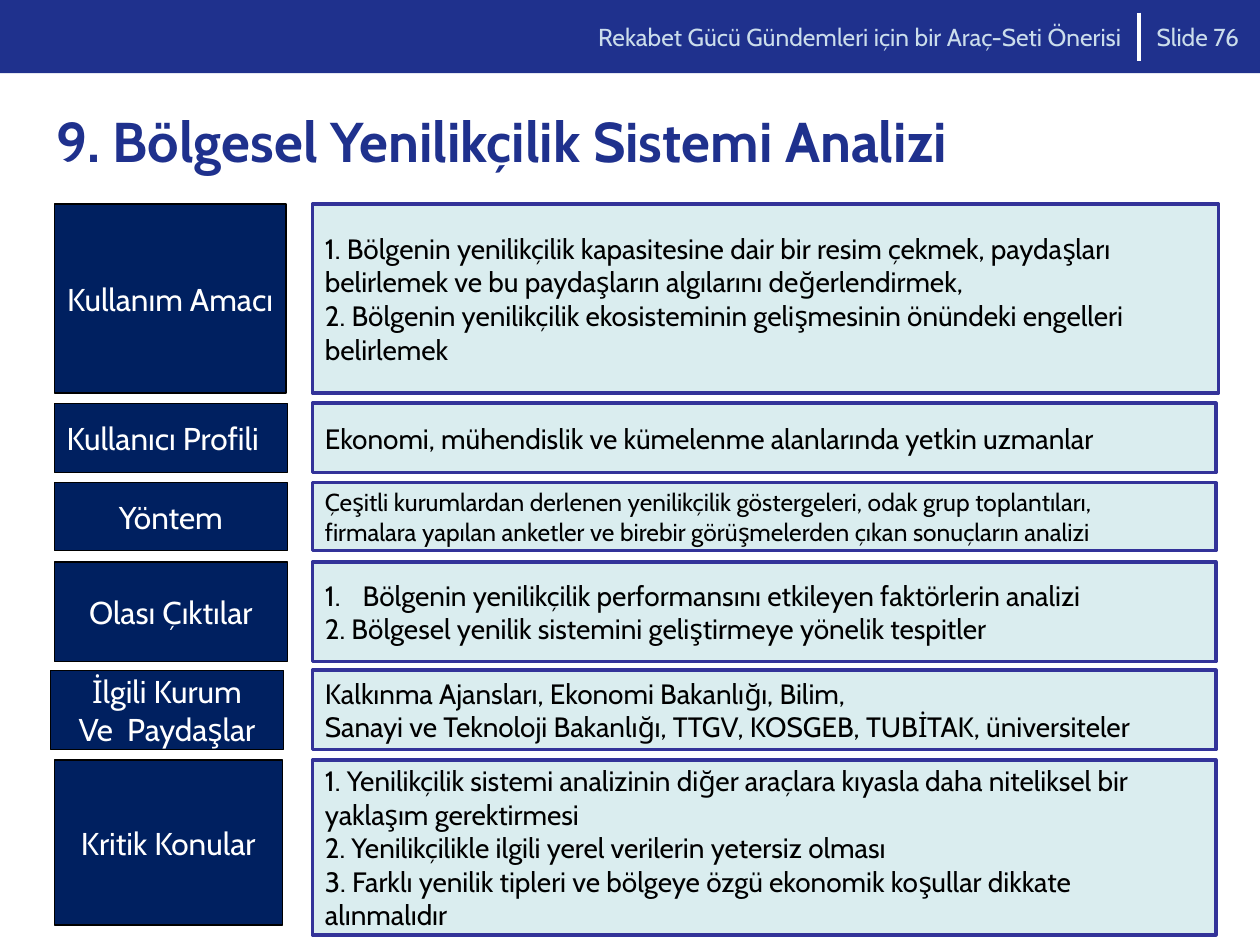
from lxml.etree import SubElement
from pptx import Presentation
from pptx.dml.color import RGBColor
from pptx.enum.shapes import MSO_CONNECTOR, MSO_SHAPE
from pptx.enum.text import MSO_ANCHOR, PP_ALIGN
from pptx.oxml.ns import qn
from pptx.util import Pt

BLUE = RGBColor(0x1F, 0x31, 0x8D)
NAVY = RGBColor(0x00, 0x20, 0x60)
INDIGO = RGBColor(0x33, 0x33, 0x99)
PALE_TEAL = RGBColor(0xDA, 0xED, 0xEF)
PALE_BLUE = RGBColor(0xCB, 0xDD, 0xEB)
WHITE = RGBColor(0xFF, 0xFF, 0xFF)
BLACK = RGBColor(0x00, 0x00, 0x00)
LEFT, CENTER, RIGHT = PP_ALIGN.LEFT, PP_ALIGN.CENTER, PP_ALIGN.RIGHT


def add_box(box, fill, line=None, line_width=0):
    """Add a flat rectangle; box is left, top, width, height in points."""
    shape = slide.shapes.add_shape(MSO_SHAPE.RECTANGLE, *map(Pt, box))
    shape.shadow.inherit = False
    shape.fill.solid()
    shape.fill.fore_color.rgb = fill
    if line is None:
        shape.line.fill.background()
    else:
        shape.line.color.rgb = line
        shape.line.width = Pt(line_width)
    return shape


def write(shape, lines, size, color, alignment=LEFT, bold=False, indent=0, numbered=()):
    """Fill a shape with one paragraph per line; numbered lists the auto-numbered lines."""
    frame = shape.text_frame
    frame.word_wrap = alignment != CENTER
    frame.vertical_anchor = MSO_ANCHOR.MIDDLE
    for index, line in enumerate(lines):
        paragraph = frame.paragraphs[0] if index == 0 else frame.add_paragraph()
        paragraph.alignment = alignment
        if indent:
            properties = paragraph._p.get_or_add_pPr()
            properties.set("marL", str(Pt(indent)))
            properties.set("indent", str(-Pt(indent)))
            if index in numbered:
                SubElement(properties, qn("a:buAutoNum"), type="arabicPeriod")
        run = paragraph.add_run()
        run.text = line
        for name, value in {"name": "Cabin", "size": Pt(size), "bold": bold}.items():
            setattr(run.font, name, value)
        run.font.color.rgb = color


presentation = Presentation()
presentation.slide_width, presentation.slide_height = Pt(720), Pt(540)
slide = presentation.slides.add_slide(presentation.slide_layouts[6])

# Header band
add_box((0, 0, 720, 41.8), BLUE)
divider = slide.shapes.add_connector(MSO_CONNECTOR.STRAIGHT, Pt(650.9), Pt(7.2), Pt(650.9), Pt(34.6))
divider.line.color.rgb = WHITE
divider.line.width = Pt(2.5)
SubElement(divider._element.spPr, qn("a:effectLst"))
for left, width, text, alignment in (
    (149.8, 498.2, "Rekabet Gücü Gündemleri için bir Araç-Seti Önerisi", RIGHT),
    (653.8, 66.2, "Slide 76", LEFT),
):
    header = slide.shapes.add_textbox(Pt(left), Pt(0), Pt(width), Pt(42))
    write(header, [text], 14, PALE_BLUE, alignment)

title = add_box((25.2, 60.5, 671.8, 39.6), WHITE)
write(title, ["9. Bölgesel Yenilikçilik Sistemi Analizi"], 32, BLUE, bold=True)

# Each row: top, label box (left, width, height), label lines and alignment,
# body box (width, height), body lines and their format
rows = (
    (116.6, (31, 132.5, 108), ["Kullanım Amacı"], CENTER, (517.7, 108), [
        "1. Bölgenin yenilikçilik kapasitesine dair bir resim çekmek, paydaşları",
        "belirlemek ve bu paydaşların algılarını değerlendirmek,",
        "2. Bölgenin yenilikçilik ekosisteminin gelişmesinin önündeki engelleri",
        "belirlemek",
    ], {"size": 16, "indent": 40}),
    (230.4, (31, 133.2, 39.6), ["Kullanıcı Profili"], LEFT, (516.2, 39.6), [
        "Ekonomi, mühendislik ve kümelenme alanlarında yetkin uzmanlar",
    ], {"size": 16}),
    (275.8, (31, 133.2, 38.9), ["Yöntem"], CENTER, (516.2, 38.9), [
        "Çeşitli kurumlardan derlenen yenilikçilik göstergeleri, odak grup toplantıları,",
        "firmalara yapılan anketler ve birebir görüşmelerden çıkan sonuçların analizi",
    ], {"size": 14}),
    (321.1, (31, 133.2, 56.9), ["Olası Çıktılar"], CENTER, (516.2, 56.9), [
        "Bölgenin yenilikçilik performansını etkileyen faktörlerin analizi",
        "2. Bölgesel yenilik sistemini geliştirmeye yönelik tespitler",
    ], {"size": 16, "indent": 21.6, "numbered": (0,)}),
    (383, (28.8, 133.2, 45.4), ["İlgili Kurum", "Ve  Paydaşlar"], CENTER, (516.2, 45.4), [
        "Kalkınma Ajansları, Ekonomi Bakanlığı, Bilim,",
        "Sanayi ve Teknoloji Bakanlığı, TTGV, KOSGEB, TUBİTAK, üniversiteler",
    ], {"size": 16}),
    (434.2, (31, 130.3, 94.3), ["Kritik Konular"], CENTER, (516.2, 100.1), [
        "1. Yenilikçilik sistemi analizinin diğer araçlara kıyasla daha niteliksel bir",
        "yaklaşım gerektirmesi",
        "2. Yenilikçilikle ilgili yerel verilerin yetersiz olması",
        "3. Farklı yenilik tipleri ve bölgeye özgü ekonomik koşullar dikkate",
        "alınmalıdır",
    ], {"size": 16, "indent": 32}),
)
for top, label_box, label_lines, alignment, body_size, body_lines, body_format in rows:
    left, width, height = label_box
    label = add_box((left, top, width, height), NAVY, BLACK, 0.75)
    write(label, label_lines, 18, WHITE, alignment)
    body = add_box((178.6, top, *body_size), PALE_TEAL, INDIGO, 2)
    write(body, body_lines, color=BLACK, **body_format)

presentation.save("out.pptx")
